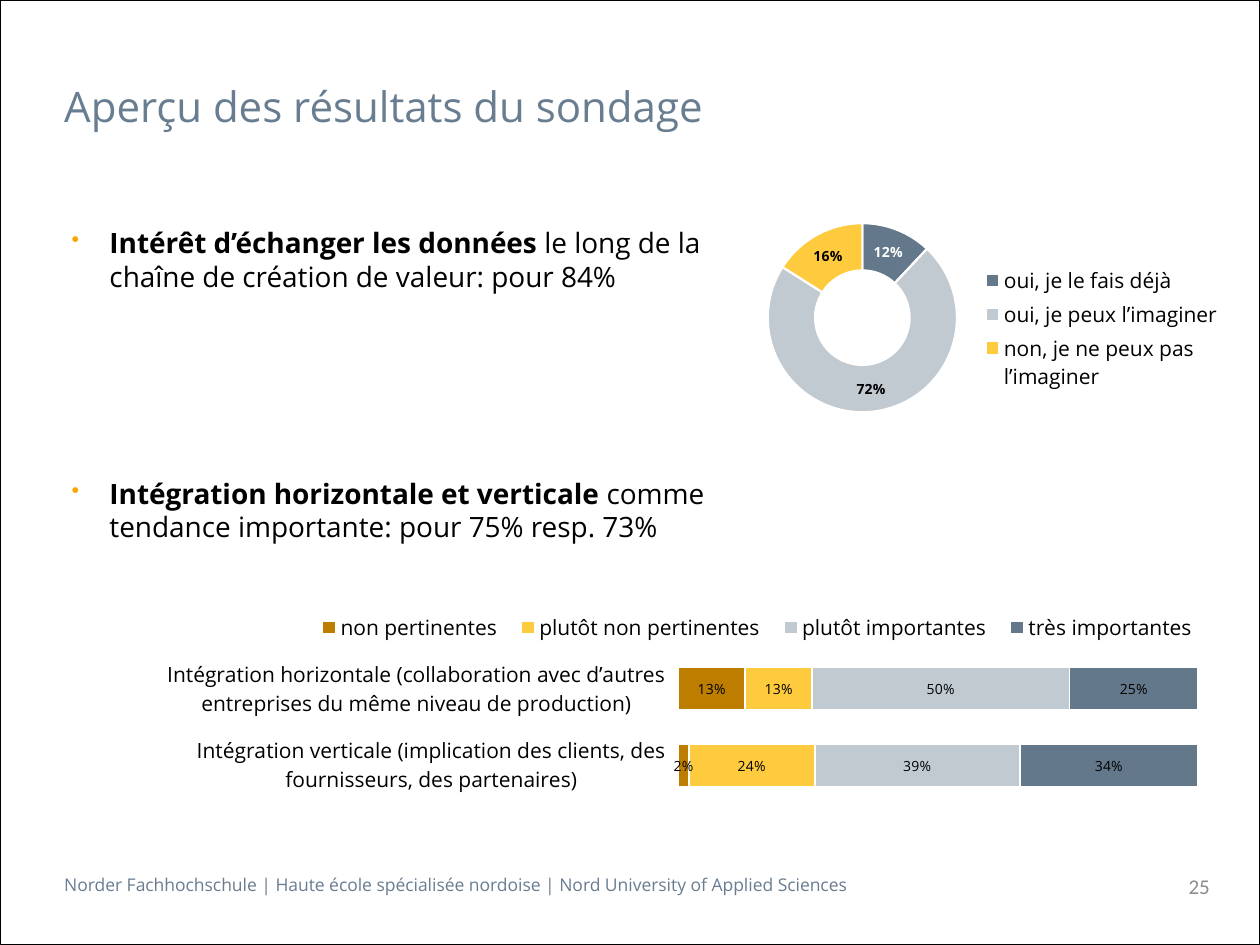
from lxml import etree
from pptx import Presentation
from pptx.chart.data import CategoryChartData
from pptx.dml.color import RGBColor
from pptx.enum.chart import XL_CHART_TYPE as CT, XL_LEGEND_POSITION as LP, XL_TICK_MARK as TM
from pptx.enum.shapes import MSO_SHAPE
from pptx.enum.text import MSO_ANCHOR, PP_ALIGN
from pptx.oxml.ns import qn
from pptx.util import Pt

FONT = "Open Sans"
BLACK = RGBColor(0, 0, 0)
WHITE = RGBColor(255, 255, 255)
TITLE = RGBColor(0x69, 0x7D, 0x91)
GREY = RGBColor(0x8C, 0x8C, 0x8C)
OCHRE = RGBColor(0xBD, 0x7E, 0x00)
YELLOW = RGBColor(0xFF, 0xCB, 0x3E)
SILVER = RGBColor(0xC1, 0xC9, 0xD1)
SLATE = RGBColor(0x64, 0x78, 0x8B)
BULLET = "FAA500"


def style(font, size, color, name=FONT, bold=False):
    font.size, font.name, font.bold = Pt(size), name, bold
    font.color.rgb = color


def add_box(slide, box, side=0):
    tf = slide.shapes.add_textbox(*map(Pt, box)).text_frame
    tf.word_wrap = True
    tf.margin_left = tf.margin_right = Pt(side)
    return tf


def add_line(slide, box, text, size, color):
    tf = add_box(slide, box)
    tf.text = text
    style(tf.paragraphs[0].runs[0].font, size, color)


def add_frame(slide, box):
    s = slide.shapes.add_shape(MSO_SHAPE.RECTANGLE, *map(Pt, box))
    s.shadow.inherit = False
    s.fill.background()
    s.line.color.rgb = BLACK
    s.line.width = Pt(0.5)


def add_number(slide, box, number):
    tf = add_box(slide, box, 7.2)
    tf.vertical_anchor = MSO_ANCHOR.MIDDLE
    tf.text = number
    p = tf.paragraphs[0]
    p.alignment = PP_ALIGN.RIGHT
    style(p.runs[0].font, 12, GREY, "Calibri")


def add_bullet(p):
    pPr = p._p.get_or_add_pPr()
    pPr.set("marL", str(Pt(21.6)))
    pPr.set("indent", str(-Pt(21.6)))
    color = etree.SubElement(pPr, qn("a:buClr"))
    etree.SubElement(color, qn("a:srgbClr"), val=BULLET)
    etree.SubElement(pPr, qn("a:buSzPct"), val="80000")
    etree.SubElement(pPr, qn("a:buChar"), char="•")


def add_findings(slide, box, findings):
    tf = add_box(slide, box)
    for i, (strong, rest) in enumerate(findings):
        p = tf.add_paragraph() if i else tf.paragraphs[0]
        p.space_before = Pt(99 if i else 6)
        p.space_after = Pt(6)
        add_bullet(p)
        for text, bold in ((strong, True), (rest, False)):
            r = p.add_run()
            r.text = text
            style(r.font, 16, BLACK, bold=bold)


def set_layout(parent, index, frame, inner=False):
    for old in parent.findall(qn("c:layout")):
        parent.remove(old)
    layout = etree.Element(qn("c:layout"))
    manual = etree.SubElement(layout, qn("c:manualLayout"))
    if inner:
        etree.SubElement(manual, qn("c:layoutTarget"), val="inner")
    for tag in ("xMode", "yMode"):
        etree.SubElement(manual, qn(f"c:{tag}"), val="edge")
    for tag, value in zip("xywh", frame):
        etree.SubElement(manual, qn(f"c:{tag}"), val=str(value))
    parent.insert(index, layout)


def add_chart(slide, box, kind, cats, series, plot_frame, legend_pos, legend_frame):
    data = CategoryChartData(number_format="0%")
    data.categories = cats
    for name, values in series:
        data.add_series(name, values)
    chart = slide.shapes.add_chart(kind, *map(Pt, box), data).chart
    chart.has_title = False
    style(chart.font, 8, BLACK)
    chart.has_legend = True
    legend = chart.legend
    legend.position = legend_pos
    legend.include_in_layout = False
    style(legend.font, 12, BLACK)
    set_layout(legend._element, 1, legend_frame)
    set_layout(chart._chartSpace.chart.plotArea, 0, plot_frame, True)
    plot = chart.plots[0]
    plot.has_data_labels = True
    labels = plot.data_labels
    labels.show_value = True
    labels.show_percentage = False
    labels.number_format = "0%"
    labels.number_format_is_linked = False
    return chart


def paint(fmt, color, width):
    fmt.fill.solid()
    fmt.fill.fore_color.rgb = color
    fmt.line.color.rgb = WHITE
    fmt.line.width = Pt(width)


def add_interest_chart(slide, box):
    cats = ["oui, je le fais déjà", "oui, je peux l’imaginer", "non, je ne peux pas l’imaginer"]
    chart = add_chart(slide, box, CT.DOUGHNUT, cats, [("Series 1", (0.12, 0.72, 0.16))],
                      (0.02, 0.02, 0.48, 0.95), LP.RIGHT, (0.49, 0.21, 0.47, 0.68))
    plot = chart.plots[0]
    style(plot.data_labels.font, 8, BLACK, bold=True)
    points = plot.series[0].points
    for i, color in enumerate((SLATE, SILVER, YELLOW)):
        paint(points[i].format, color, 1.25)
        style(points[i].data_label.font, 8, BLACK if i else WHITE, bold=True)


def add_integration_chart(slide, box):
    cats = ["Intégration horizontale (collaboration avec d’autres entreprises du même niveau de production)",
            "Intégration verticale (implication des clients, des fournisseurs, des partenaires)"]
    series = [("non pertinentes", (0.13, 0.02)), ("plutôt non pertinentes", (0.13, 0.24)),
              ("plutôt importantes", (0.5, 0.39)), ("très importantes", (0.25, 0.34))]
    chart = add_chart(slide, box, CT.BAR_STACKED_100, cats, series,
                      (0.5, 0.23, 0.46, 0.77), LP.TOP, (0.17, 0.03, 0.8, 0.17))
    plot = chart.plots[0]
    plot.gap_width, plot.overlap = 80, 100
    style(plot.data_labels.font, 8, BLACK)
    for s, color in zip(plot.series, (OCHRE, YELLOW, SILVER, SLATE)):
        paint(s.format, color, 1)
    axis = chart.category_axis
    axis.reverse_order = True
    axis.major_tick_mark = TM.OUTSIDE
    axis.format.line.fill.background()
    style(axis.tick_labels.font, 12, BLACK)
    chart.value_axis.has_major_gridlines = False
    chart.value_axis.visible = False


def main():
    prs = Presentation()
    prs.slide_width, prs.slide_height = Pt(720), Pt(540)
    slide = prs.slides.add_slide(prs.slide_layouts[6])
    add_line(slide, (36.7, 496, 526, 19.5),
             "Norder Fachhochschule | Haute école spécialisée nordoise | Nord University of Applied Sciences",
             10, TITLE)
    add_frame(slide, (0, 0, 720, 540))
    add_number(slide, (482.4, 491.8, 216, 28.8), "25")
    add_line(slide, (36.7, 42.5, 638, 42.5), "Aperçu des résultats du sondage", 24, TITLE)
    add_findings(slide, (41, 125.3, 381.6, 368.6), [
        ("Intérêt d’échanger les données", " le long de la chaîne de création de valeur: pour 84%"),
        ("Intégration horizontale et verticale ", "comme tendance importante: pour 75% resp. 73%")])
    add_integration_chart(slide, (64.8, 345.6, 645.8, 113.8))
    add_interest_chart(slide, (416.2, 125.3, 294.5, 113.8))
    prs.save("out.pptx")


if __name__ == "__main__":
    main()
